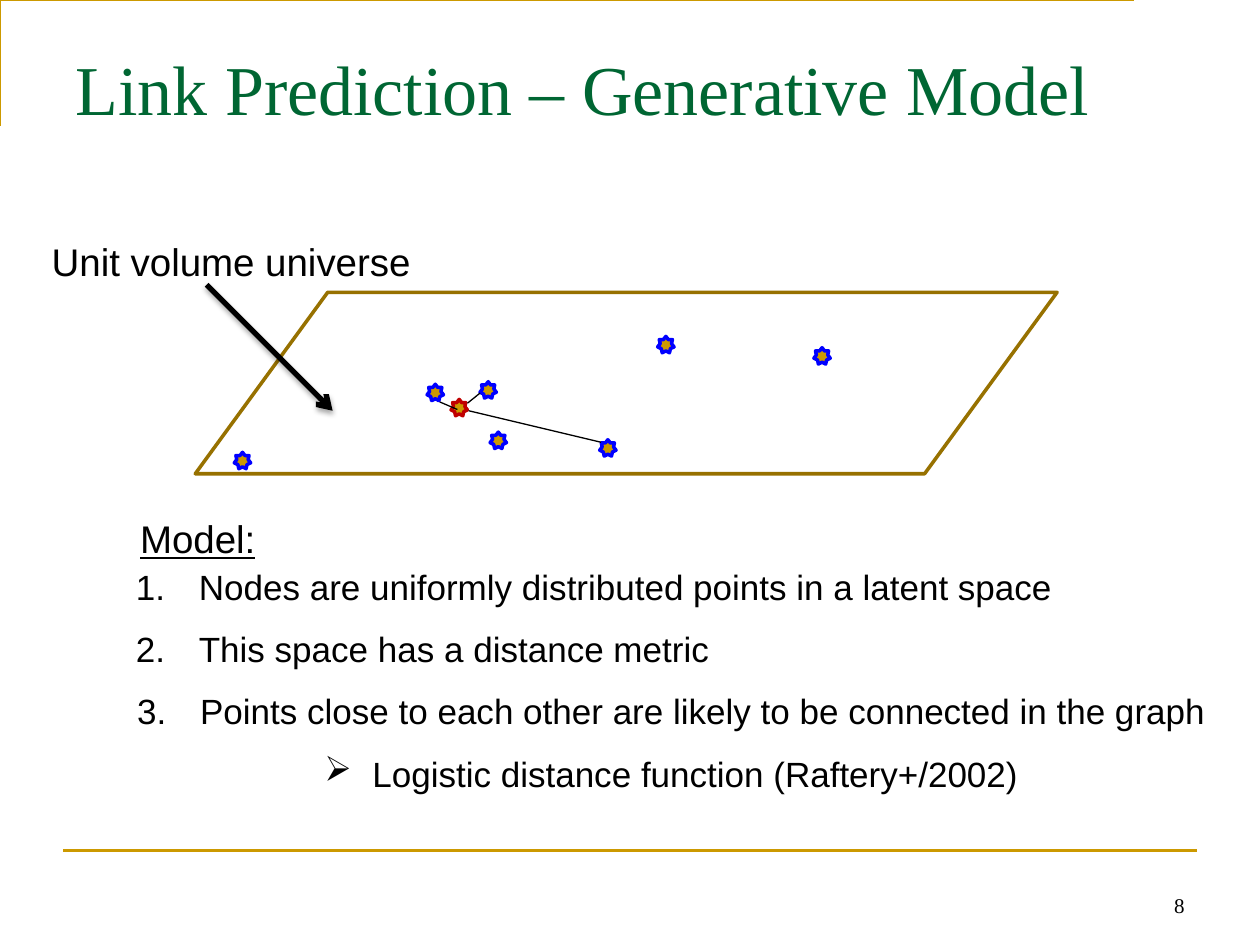
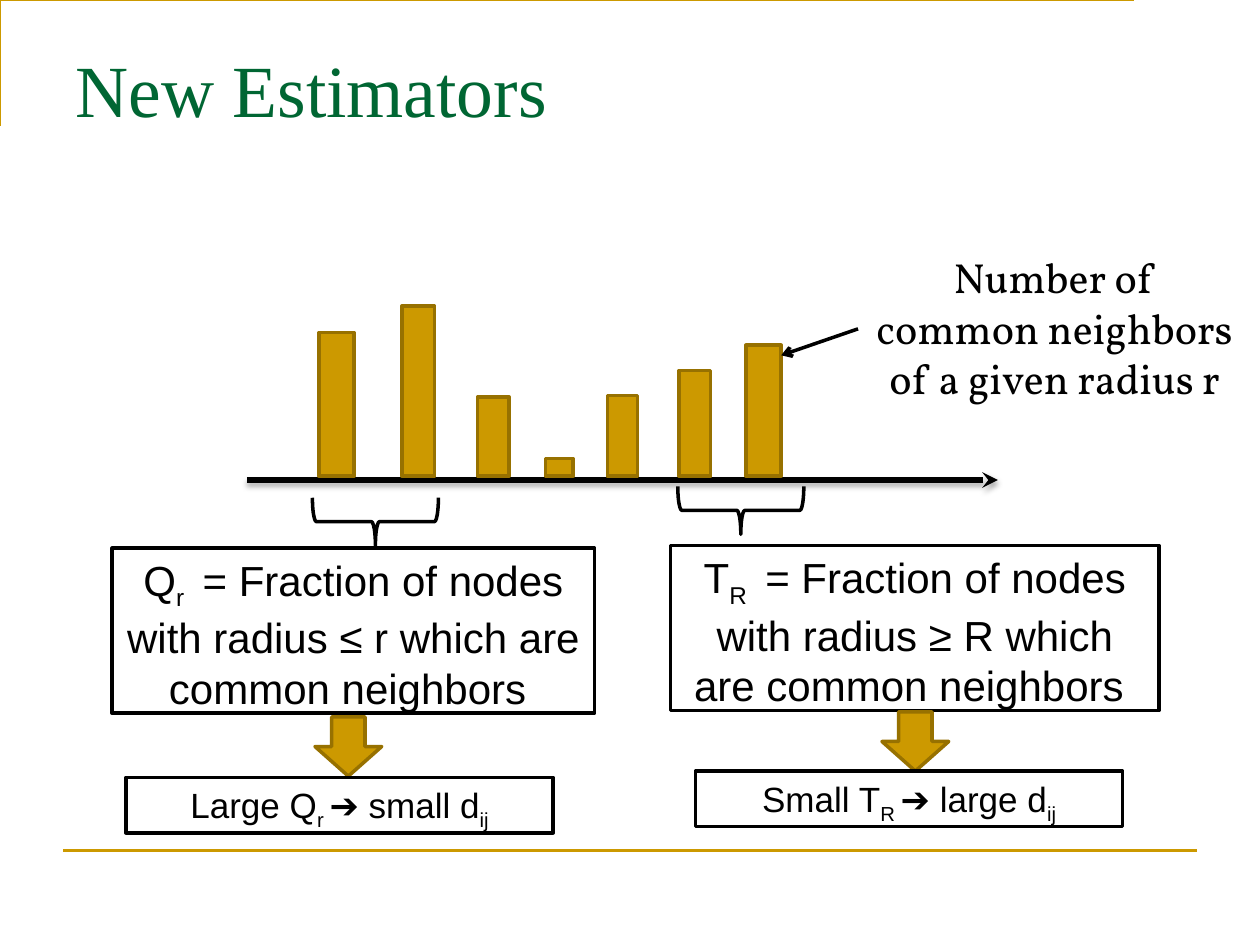
from typing import NamedTuple, Optional

import pptx
import pptx.dml.color
import pptx.enum.shapes
import pptx.enum.text
import pptx.oxml
import pptx.oxml.ns
import pptx.util

Inches = pptx.util.Inches
Pt = pptx.util.Pt
SHAPE = pptx.enum.shapes.MSO_SHAPE
ALIGN = pptx.enum.text.PP_ALIGN
ANCHOR = pptx.enum.text.MSO_ANCHOR

COLORS = {
    "gold": "CC9900",
    "dark_gold": "977100",
    "green": "006633",
    "blue": "0000FF",
    "red": "C00000",
    "black": "000000",
    "white": "FFFFFF",
}
BODY_FONT = "Arial"
TITLE_FONT = "Times New Roman"
STAR_SIZE = 0.13
BAR_BASE = 3.78


class Box(NamedTuple):
    left: float
    top: float
    width: float
    height: float


class Star(NamedTuple):
    left: float
    top: float
    color: str = "blue"


class Link(NamedTuple):
    x1: float
    y1: float
    x2: float
    y2: float


class Bar(NamedTuple):
    left: float
    top: float
    width: float


class Estimator(NamedTuple):
    definition: str
    definition_box: Box
    brace: Box
    arrow: Box
    outcome: str
    outcome_box: Box


STARS = [
    Star(3.58, 3.17, "red"),
    Star(3.81, 3.03),
    Star(3.39, 3.05),
    Star(3.89, 3.43),
    Star(4.76, 3.49),
    Star(5.22, 2.67),
    Star(6.46, 2.76),
    Star(1.86, 3.59),
]
LINKS = [
    Link(3.71, 3.2, 3.81, 3.12),
    Link(3.49, 3.19, 3.63, 3.25),
    Link(3.72, 3.26, 4.77, 3.51),
]
MODEL_POINTS = [
    ("Nodes are uniformly distributed points in a latent space", ALIGN.LEFT),
    ("This space has a distance metric", ALIGN.LEFT),
    ("Points close to each other are likely to be connected in the graph", ALIGN.CENTER),
]
BARS = [
    Bar(2.53, 2.64, 0.28),
    Bar(3.19, 2.43, 0.26),
    Bar(3.79, 3.15, 0.25),
    Bar(4.33, 3.64, 0.22),
    Bar(4.82, 3.14, 0.24),
    Bar(5.39, 2.94, 0.25),
    Bar(5.92, 2.74, 0.28),
]
ESTIMATORS = [
    Estimator(
        "Q|r | = Fraction of nodes with radius ≤ r which are common neighbors ",
        Box(0.89, 4.35, 3.83, 1.31), Box(2.79, 3.64, 0.38, 1), Box(2.5, 5.69, 0.53, 0.47),
        "Large Q|r |➔ small d|ij", Box(1, 6.17, 3.39, 0.44),
    ),
    Estimator(
        "T|R | = Fraction of nodes with radius ≥ R which are common neighbors ",
        Box(5.32, 4.33, 3.88, 1.31), Box(5.69, 3.55, 0.38, 1), Box(7, 5.65, 0.53, 0.47),
        "Small T|R |➔ large d|ij", Box(5.52, 6.12, 3.39, 0.44),
    ),
]


def rgb(name: str):
    return pptx.dml.color.RGBColor.from_string(COLORS[name])


def add_xml(parent, xml: str) -> None:
    tag, rest = xml.split(" ", 1) if " " in xml else (xml, "")
    ns = pptx.oxml.ns.nsdecls("a")
    parent.append(pptx.oxml.parse_xml(f"<{tag} {ns} {rest}"))


def write(tf, text: str, *, size: float, font: str = BODY_FONT, color: str = "black",
          align=ALIGN.CENTER, underline: bool = False, bullet: str = "",
          indent: float = 0, append: bool = False) -> None:
    p = tf.add_paragraph() if append else tf.paragraphs[0]
    p.alignment = align
    if append:
        p.space_before = Pt(11.5)
    if bullet:
        pPr = p._p.get_or_add_pPr()
        pPr.set("marL", str(Inches(indent)))
        pPr.set("indent", str(-Inches(indent)))
        add_xml(pPr, bullet)
    for i, part in enumerate(text.split("|")):
        r = p.add_run()
        r.text = part
        r.font.size = Pt(size)
        r.font.name = font
        r.font.color.rgb = rgb(color)
        if underline:
            r.font.underline = True
        if i % 2:
            r._r.get_or_add_rPr().set("baseline", "-25000")


def prepare(sp, anchor=ANCHOR.TOP):
    tf = sp.text_frame
    tf.word_wrap = True
    tf.auto_size = pptx.enum.text.MSO_AUTO_SIZE.NONE
    tf.vertical_anchor = anchor
    return tf


def add_text(slide, box: Box, anchor=ANCHOR.TOP):
    return prepare(slide.shapes.add_textbox(*map(Inches, box)), anchor)


def outline(sp, fill: Optional[str], line: str, width: float) -> None:
    sp.shadow.inherit = False
    if fill:
        sp.fill.solid()
        sp.fill.fore_color.rgb = rgb(fill)
    else:
        sp.fill.background()
    sp.line.color.rgb = rgb(line)
    sp.line.width = Pt(width)


def add_shape(slide, kind, box: Box, fill: Optional[str] = "gold",
              line: str = "dark_gold"):
    sp = slide.shapes.add_shape(kind, *map(Inches, box))
    outline(sp, fill, line, 2)
    return sp


def add_line(slide, link: Link, *, color: str = "black", width: float = 0.75,
             head: str = "", shadow: bool = False) -> None:
    sp = slide.shapes.add_connector(
        pptx.enum.shapes.MSO_CONNECTOR.STRAIGHT, *map(Inches, link))
    sp.line.color.rgb = rgb(color)
    sp.line.width = Pt(width)
    if head:
        add_xml(sp.line._get_or_add_ln(), f'a:tailEnd type="{head}"/>')
    effect = (
        f'<a:outerShdw blurRad="{Pt(3.1)}" dist="{Pt(1.8)}" dir="5400000" rotWithShape="0">'
        f'<a:srgbClr val="{COLORS["black"]}"><a:alpha val="35000"/></a:srgbClr>'
        "</a:outerShdw>"
    ) if shadow else ""
    add_xml(sp._element.spPr, f"a:effectLst >{effect}</a:effectLst>")


def add_slide(prs, title: str, box: Box, size: float):
    slide = prs.slides.add_slide(prs.slide_layouts[5])
    fb = slide.shapes.build_freeform(0.42, 0.92, scale=Inches(1))
    fb.add_line_segments([(0.42, 0.25), (9.42, 0.25)], close=False)
    outline(fb.convert_to_shape(), None, "gold", 1.5)
    add_line(slide, Link(0.5, 6.75, 9.5, 6.75), color="gold", width=1.5)
    sp = slide.shapes.title
    sp.left, sp.top, sp.width, sp.height = map(Inches, box)
    write(prepare(sp), title, size=size, font=TITLE_FONT, color="green", align=ALIGN.LEFT)
    return slide


def build_generative_model(prs) -> None:
    slide = add_slide(prs, "Link Prediction – Generative Model", Box(0.5, 0.31, 9.25, 0.94), 40)
    universe = add_shape(slide, SHAPE.PARALLELOGRAM, Box(1.55, 2.32, 6.84, 1.44), "white")
    universe.adjustments[0] = 0.73
    for star in STARS:
        add_shape(slide, SHAPE.STAR_7_POINT, Box(star.left, star.top, STAR_SIZE, STAR_SIZE),
                  line=star.color)
    for link in LINKS:
        add_line(slide, link)
    write(add_text(slide, Box(0.22, 1.84, 3.23, 0.47)), "Unit volume universe", size=22)
    add_line(slide, Link(1.64, 2.26, 2.64, 3.26), width=3, head="arrow", shadow=True)
    write(add_text(slide, Box(0.67, 4.04, 1.8, 0.47)), "Model:", size=22, underline=True)
    tf = add_text(slide, Box(0.98, 4.44, 8.7, 1.95))
    for i, (point, align) in enumerate(MODEL_POINTS):
        write(tf, point, size=20, align=align, indent=0.5, append=i > 0,
              bullet='a:buAutoNum type="arabicPeriod"/>')
    write(tf, "Logistic distance function (Raftery+/2002)", size=20, indent=0.38,
          append=True, bullet='a:buChar char="➢"/>')
    write(add_text(slide, Box(7.17, 6.83, 2.33, 0.5), ANCHOR.BOTTOM), "8", size=12,
          font=TITLE_FONT, align=ALIGN.RIGHT)


def build_new_estimators(prs) -> None:
    slide = add_slide(prs, "New Estimators", Box(0.5, 0.3, 9, 1.25), 42)
    add_line(slide, Link(1.96, 3.81, 7.92, 3.81), width=3, head="stealth", shadow=True)
    for bar in BARS:
        add_shape(slide, SHAPE.RECTANGLE, Box(*bar, BAR_BASE - bar.top))
    for est in ESTIMATORS:
        sp = add_shape(slide, SHAPE.RECTANGLE, est.definition_box, None, "black")
        write(prepare(sp), est.definition, size=24)
        add_shape(slide, SHAPE.LEFT_BRACE, est.brace, None, "black").rotation = 270
        add_shape(slide, SHAPE.DOWN_ARROW, est.arrow)
        sp = add_shape(slide, SHAPE.RECTANGLE, est.outcome_box, None, "black")
        write(prepare(sp), est.outcome, size=20)
    write(add_text(slide, Box(6.81, 1.95, 3.12, 1.31)),
          "Number of common neighbors of a given radius r", size=24, font="Vollkorn")
    add_line(slide, Link(6.81, 2.61, 6.2, 2.82), width=2, head="arrow")


def main() -> None:
    prs = pptx.Presentation()
    prs.slide_width = Inches(10)
    prs.slide_height = Inches(7.5)
    build_generative_model(prs)
    build_new_estimators(prs)
    prs.save("out.pptx")


if __name__ == "__main__":
    main()
